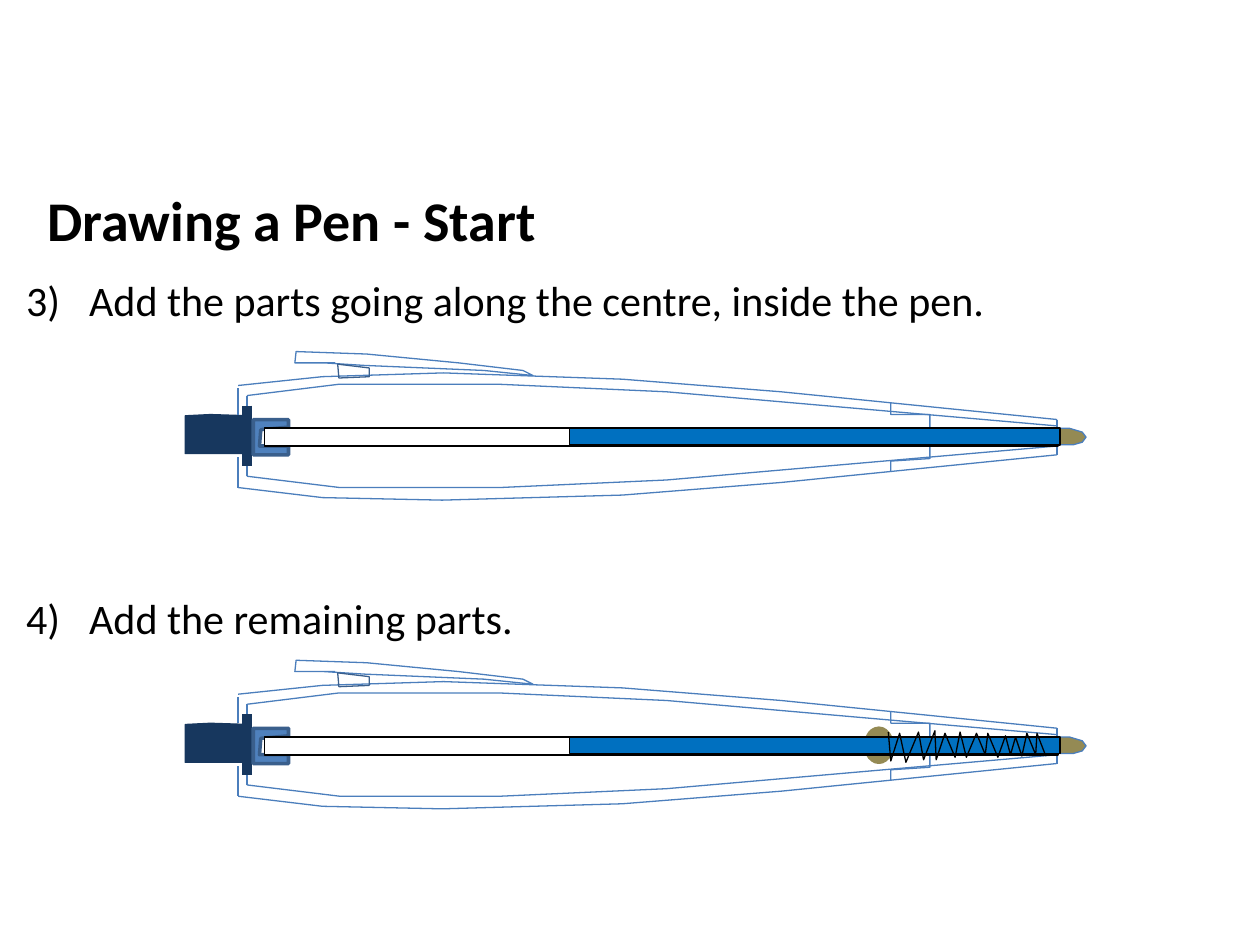
from dataclasses import dataclass

from lxml import etree
from pptx import Presentation
from pptx.dml.color import RGBColor
from pptx.enum.shapes import MSO_CONNECTOR, MSO_SHAPE
from pptx.enum.text import MSO_AUTO_SIZE
from pptx.oxml.ns import qn
from pptx.shapes.autoshape import Shape
from pptx.shapes.group import GroupShape
from pptx.slide import Slide
from pptx.util import Pt

PX = 9144  # EMU per px, 100 px to the inch
STRAIGHT = MSO_CONNECTOR.STRAIGHT
RECTANGLE = MSO_SHAPE.RECTANGLE
OVAL = MSO_SHAPE.OVAL
FIT_SHAPE = MSO_AUTO_SIZE.SHAPE_TO_FIT_TEXT


@dataclass(frozen=True)
class Theme:
    font: str = "Calibri"
    title_size: int = 32
    step_size: int = 24
    black: str = "000000"
    white: str = "FFFFFF"
    outline: str = "4B7EBC"
    edge: str = "3A5F8C"
    navy: str = "17375E"
    holder: str = "4F81BD"
    metal: str = "948A54"
    ink: str = "0070C0"


THEME = Theme()


@dataclass(frozen=True)
class Outline:
    points: tuple[tuple[int, int], ...]
    color: str = THEME.outline
    width: float = 0.75
    fill: str | None = None
    closed: bool = False


@dataclass(frozen=True)
class Edge:
    x: int
    start: int
    end: int
    color: str = THEME.outline
    width: float = 0.75


@dataclass(frozen=True)
class Solid:
    kind: MSO_SHAPE
    left: int
    top: int
    width: int
    height: int
    fill: str
    color: str = THEME.black
    line: float = 1


@dataclass(frozen=True)
class Step:
    number: int
    text: str
    top: int
    width: int
    pen_shift: int
    pieces: tuple[Outline | Edge | Solid, ...]


CASING = (
    Outline(((189, 306), (256, 299), (352, 296), (494, 301), (620, 311), (839, 333))),
    Outline(((189, 387), (256, 395), (351, 397), (494, 393), (620, 383), (839, 361))),
    Outline(((196, 314), (269, 305), (396, 305), (529, 311), (838, 338))),
    Outline(((196, 378), (270, 387), (396, 387), (529, 381), (839, 354))),
)
CLIP = (
    Outline(((257, 288), (289, 290), (384, 294), (423, 298), (415, 294),
             (364, 288), (291, 281), (235, 279), (234, 288), (266, 288))),
    Outline(((268, 289), (269, 300), (293, 299), (293, 292)),
            THEME.edge, closed=True),
)
BUTTON = Outline(((198, 330), (167, 329), (147, 330), (147, 360), (176, 360), (201, 360)),
                 THEME.navy, fill=THEME.navy)
ENDS = (
    Edge(189, 308, 329),
    Edge(189, 363, 387),
    Edge(196, 314, 329),
    Edge(196, 378, 363),
    Edge(196, 322, 370, THEME.navy, 6),
    Edge(839, 333, 361),
)
SLEEVE = Outline(((707, 320), (707, 329), (738, 329), (738, 364), (707, 366), (707, 374)))
HOLDER = Outline(((229, 339), (229, 333), (201, 333), (201, 361), (229, 361),
                  (229, 354), (206, 354), (207, 341)),
                 THEME.edge, 2, THEME.holder, closed=True)
BODY = (*CASING, *CLIP, BUTTON, *ENDS, SLEEVE, HOLDER)
REFILL = (
    Outline(((839, 340), (849, 340), (859, 343), (862, 347), (859, 351), (852, 353),
             (841, 353)), fill=THEME.metal),
    Solid(RECTANGLE, 210, 340, 630, 14, THEME.white),
    Solid(RECTANGLE, 452, 340, 389, 13, THEME.ink),
)
STOP = Solid(OVAL, 687, 333, 21, 27, THEME.metal, THEME.metal, 2)
SPRING = Outline(((705, 336), (707, 359), (714, 337), (719, 360), (729, 336), (733, 358),
                  (742, 335), (743, 358), (750, 337), (758, 356), (762, 336), (767, 356),
                  (775, 337), (782, 354), (784, 337), (792, 356), (798, 339), (802, 354),
                  (806, 340), (811, 355), (815, 337), (822, 354), (823, 337), (830, 355)),
                 THEME.black)

STEPS = (
    Step(3, "Add the parts going along the centre, inside the pen.", 213, 874, 0,
         (*BODY, *REFILL)),
    Step(4, "Add the remaining parts.", 465, 914, 245, (*BODY, STOP, *REFILL, SPRING)),
)


def style_shape(shape: Shape, color: str, width: float, fill: str | None) -> None:
    shape.shadow.inherit = False
    shape.line.color.rgb = RGBColor.from_string(color)
    shape.line.width = Pt(width)
    if fill:
        shape.fill.solid()
        shape.fill.fore_color.rgb = RGBColor.from_string(fill)
    else:
        shape.fill.background()


def draw_outline(group: GroupShape, piece: Outline, shift: int) -> None:
    builder = group.shapes.build_freeform(*piece.points[0], scale=PX)
    builder.add_line_segments(piece.points[1:], close=piece.closed)
    shape = builder.convert_to_shape(0, shift * PX)
    style_shape(shape, piece.color, piece.width, piece.fill)


def draw_edge(group: GroupShape, piece: Edge, shift: int) -> None:
    line = group.shapes.add_connector(
        STRAIGHT, piece.x * PX, (piece.start + shift) * PX,
        piece.x * PX, (piece.end + shift) * PX)
    line.line.color.rgb = RGBColor.from_string(piece.color)
    line.line.width = Pt(piece.width)
    etree.SubElement(line._element.spPr, qn("a:effectLst"))


def draw_solid(group: GroupShape, piece: Solid, shift: int) -> None:
    shape = group.shapes.add_shape(
        piece.kind, piece.left * PX, (piece.top + shift) * PX,
        piece.width * PX, piece.height * PX)
    style_shape(shape, piece.color, piece.line, piece.fill)


DRAWERS = {Outline: draw_outline, Edge: draw_edge, Solid: draw_solid}


def draw_text(page: Slide, text: str, left: int, top: int, width: int, height: int,
              size: int, bold: bool = False, number: int | None = None) -> None:
    box = page.shapes.add_textbox(left * PX, top * PX, width * PX, height * PX)
    frame = box.text_frame
    frame.word_wrap = True
    frame.auto_size = FIT_SHAPE
    para = frame.paragraphs[0]
    para.text = text
    if number is not None:
        properties = para._p.get_or_add_pPr()
        properties.set("marL", str(50 * PX))
        properties.set("indent", str(-50 * PX))
        etree.SubElement(properties, qn("a:buAutoNum"),
                         type="arabicParenR", startAt=str(number))
        para.space_after = Pt(6)
    para.font.name = THEME.font
    para.font.size = Pt(size)
    para.font.bold = bold
    para.font.color.rgb = RGBColor.from_string(THEME.black)


def draw_step(page: Slide, step: Step) -> None:
    draw_text(page, step.text, 11, step.top, step.width, 50,
              THEME.step_size, number=step.number)
    pen = page.shapes.add_group_shape()
    for piece in step.pieces:
        DRAWERS[type(piece)](pen, piece, step.pen_shift)


def main() -> None:
    deck = Presentation()
    deck.slide_width = 1000 * PX
    deck.slide_height = 750 * PX
    page = deck.slides.add_slide(deck.slide_layouts[6])
    draw_text(page, "Drawing a Pen - Start", 28, 142, 709, 64, THEME.title_size, bold=True)
    for step in STEPS:
        draw_step(page, step)
    deck.save("out.pptx")


if __name__ == "__main__":
    main()
